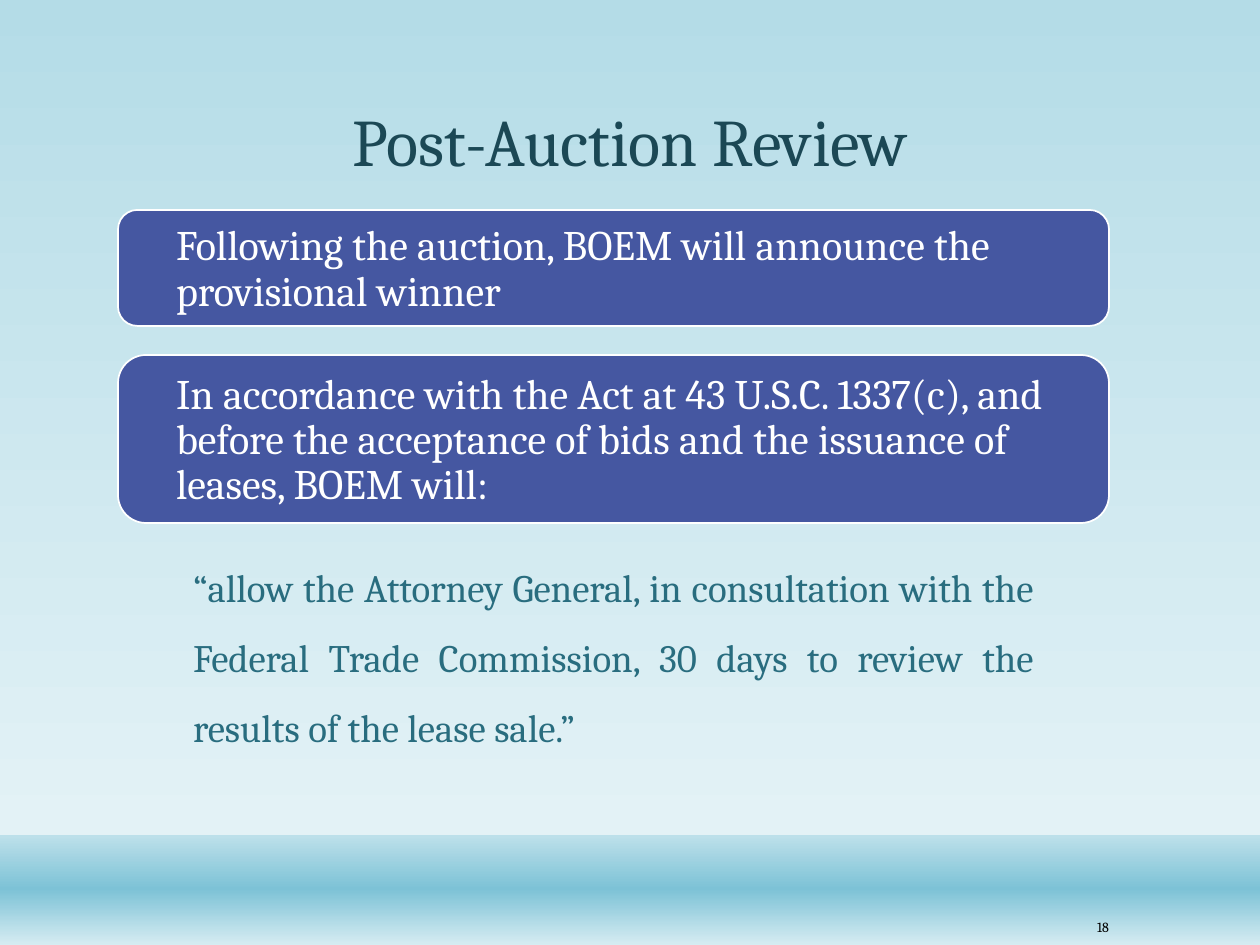
from copy import deepcopy

from pptx import Presentation
from pptx.dml.color import RGBColor
from pptx.enum.shapes import MSO_SHAPE
from pptx.enum.text import MSO_ANCHOR, PP_ALIGN
from pptx.oxml.ns import qn
from pptx.util import Pt

PX = 914400 // 126
RECT, ROUNDED = MSO_SHAPE.RECTANGLE, MSO_SHAPE.ROUNDED_RECTANGLE
TOP, MIDDLE, BOTTOM = MSO_ANCHOR.TOP, MSO_ANCHOR.MIDDLE, MSO_ANCHOR.BOTTOM
LEFT, CENTER, RIGHT = PP_ALIGN.LEFT, PP_ALIGN.CENTER, PP_ALIGN.RIGHT
JUSTIFY = PP_ALIGN.JUSTIFY


def rgb(value):
    return RGBColor.from_string(value)


def write(shape, text, size, color, align, anchor, spacing, insets):
    """Fill a shape with one paragraph; insets are left, top, right, bottom in px."""
    frame = shape.text_frame
    frame.word_wrap = True
    frame.vertical_anchor = anchor
    (frame.margin_left, frame.margin_top,
     frame.margin_right, frame.margin_bottom) = [round(i * PX) for i in insets]
    paragraph = frame.paragraphs[0]
    paragraph.alignment = align
    paragraph.line_spacing = spacing
    run = paragraph.add_run()
    run.text = text
    run.font.name = "Cambria"
    run.font.size = Pt(size)
    run.font.color.rgb = rgb(color)


prs = Presentation()
prs.slide_width, prs.slide_height = 1260 * PX, 945 * PX
slide = prs.slides.add_slide(prs.slide_layouts[6])
shapes = slide.shapes

# Sky and water gradients, top to bottom
bands = [
    (0, 945, [(0, "B4DCE7"), (0.88, "E3F2F6")]),
    (835, 110, [(0.01, "BCE0EA"), (0.49, "7DC2D6"), (1, "D6ECF2")]),
]
for top, height, stops in bands:
    band = shapes.add_shape(RECT, 0, top * PX, 1260 * PX, height * PX)
    band.shadow.inherit = False
    band.line.fill.background()
    band.fill.gradient()
    band.fill.gradient_angle = 270
    stop_list = band._element.spPr.find(qn("a:gradFill")).find(qn("a:gsLst"))
    for _ in stops[2:]:
        stop_list.append(deepcopy(stop_list[-1]))
    for stop, (position, color) in zip(band.fill.gradient_stops, stops):
        stop.position = position
        stop.color.rgb = rgb(color)

# Title, quotation and slide number
texts = [
    (139, 37, 982, 150, "Post-Auction Review", 38, "1B4855", CENTER, BOTTOM, 0.9),
    (180, 534, 867, 222,
     "“allow the Attorney General, in consultation with the Federal Trade "
     "Commission, 30 days to review the results of the lease sale.”",
     22.2, "296D7F", JUSTIFY, TOP, 1.5),
    (1056, 910, 66, 33, "18", 8, "000000", RIGHT, MIDDLE, 1.0),
]
for left, top, width, height, *content in texts:
    box = shapes.add_textbox(left * PX, top * PX, width * PX, height * PX)
    write(box, *content, (13, 6, 13, 6))

# Review steps
steps = [
    (210, 116, "Following the auction, BOEM will announce the provisional winner"),
    (355, 168, "In accordance with the Act at 43 U.S.C. 1337(c), and before the "
               "acceptance of bids and the issuance of leases, BOEM will:"),
]
for top, height, text in steps:
    step = shapes.add_shape(ROUNDED, 118 * PX, top * PX, 991 * PX, height * PX)
    step.shadow.inherit = False
    step.fill.solid()
    step.fill.fore_color.rgb = rgb("4557A1")
    step.line.color.rgb = rgb("FFFFFF")
    step.line.width = Pt(1)
    # The rounded corners already push the text inwards
    corner = height / 6 * 0.29
    write(step, text, 24, "FFFFFF", LEFT, MIDDLE, 0.9,
          (58 - corner, 4, 33 - corner, 0))

prs.save("out.pptx")
